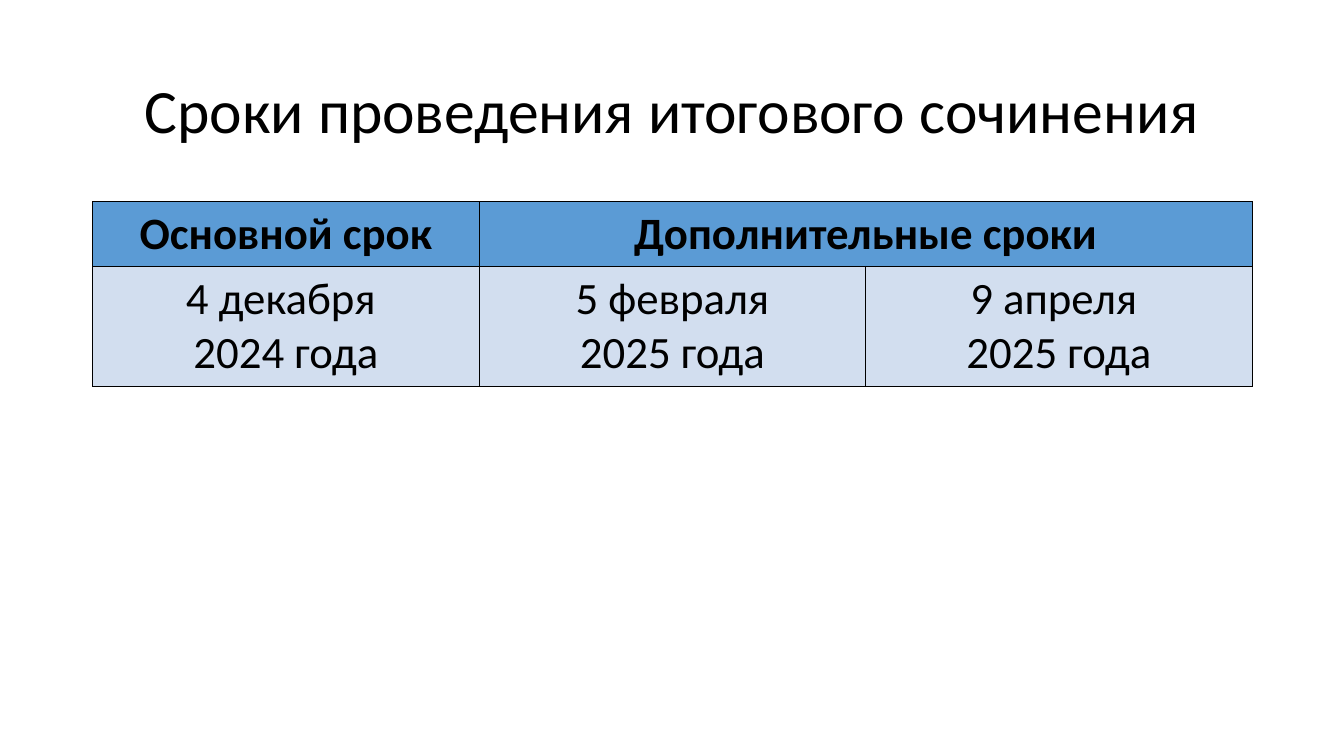
"""Builds a slide with the dates of the final essay."""
import pptx
import pptx.dml.color
import pptx.enum.text
import pptx.oxml
import pptx.oxml.ns
import pptx.util

Inches = pptx.util.Inches
Pt = pptx.util.Pt


def color(code):
    """Turn a hex string into a colour."""
    return pptx.dml.color.RGBColor.from_string(code)


def write(frame, text, size=32, bold=False, ink="000000", font="Calibri", space=1.0):
    """Fill a text frame with centred paragraphs, one per line of text."""
    frame.word_wrap = True
    for i, line in enumerate(text.split("\n")):
        par = frame.paragraphs[0] if i == 0 else frame.add_paragraph()
        par.alignment = pptx.enum.text.PP_ALIGN.CENTER
        par.line_spacing = space
        run = par.add_run()
        run.text = line
        run.font.size = Pt(size)
        run.font.bold = bold
        run.font.name = font
        run.font.color.rgb = color(ink)


class Deck:
    """Hold the style and the current slide."""

    head = "5B9BD5"
    body = "D2DEEF"
    edge = "000000"
    middle = pptx.enum.text.MSO_ANCHOR.MIDDLE

    def __init__(self):
        """Start a wide deck with one title-only slide."""
        self.show = pptx.Presentation()
        self.show.slide_width = Inches(13.33)
        self.show.slide_height = Inches(7.5)
        self.slide = self.show.slides.add_slide(self.show.slide_layouts[5])

    def title(self, text, left, top, width, height):
        """Place and fill the title."""
        box = self.slide.shapes.title
        box.left, box.top = Inches(left), Inches(top)
        box.width, box.height = Inches(width), Inches(height)
        box.text_frame.vertical_anchor = self.middle
        write(box.text_frame, text, size=44, space=0.9)

    def border(self, cell):
        """Draw a thin line on each side of a cell."""
        props = cell._tc.get_or_add_tcPr()
        for i, side in enumerate(("lnL", "lnR", "lnT", "lnB")):
            props.insert(i, pptx.oxml.parse_xml(
                f'<a:{side} {pptx.oxml.ns.nsdecls("a")} w="{Pt(1)}"><a:solidFill>'
                f'<a:srgbClr val="{self.edge}"/></a:solidFill></a:{side}>'))

    def table(self, rows, left, top, width, heights):
        """Add a table with a head row; None joins a cell to the one before it."""
        count = len(rows[0])
        grid = self.slide.shapes.add_table(
            len(rows), count, Inches(left), Inches(top),
            Inches(width), Inches(sum(heights))).table
        for col in grid.columns:
            col.width = Inches(width / count)
        for r, texts in enumerate(rows):
            grid.rows[r].height = Inches(heights[r])
            for c, text in enumerate(texts):
                cell = grid.cell(r, c)
                cell.fill.solid()
                cell.fill.fore_color.rgb = color(self.body if r else self.head)
                cell.vertical_anchor = self.middle
                self.border(cell)
                if text is None:
                    grid.cell(r, c - 1).merge(cell)
                else:
                    write(cell.text_frame, text, bold=r == 0)


def main():
    """Build and save the deck."""
    deck = Deck()
    deck.title("Сроки проведения итогового сочинения", 0.92, 0.4, 11.5, 1.45)
    deck.table([
        ["Основной срок", "Дополнительные сроки", None],
        ["4 декабря \n2024 года", " 5 февраля \n2025 года", "9 апреля \n2025 года"],
    ], 0.92, 2, 11.5, [0.64, 1.18])
    deck.show.save("out.pptx")


if __name__ == "__main__":
    main()
